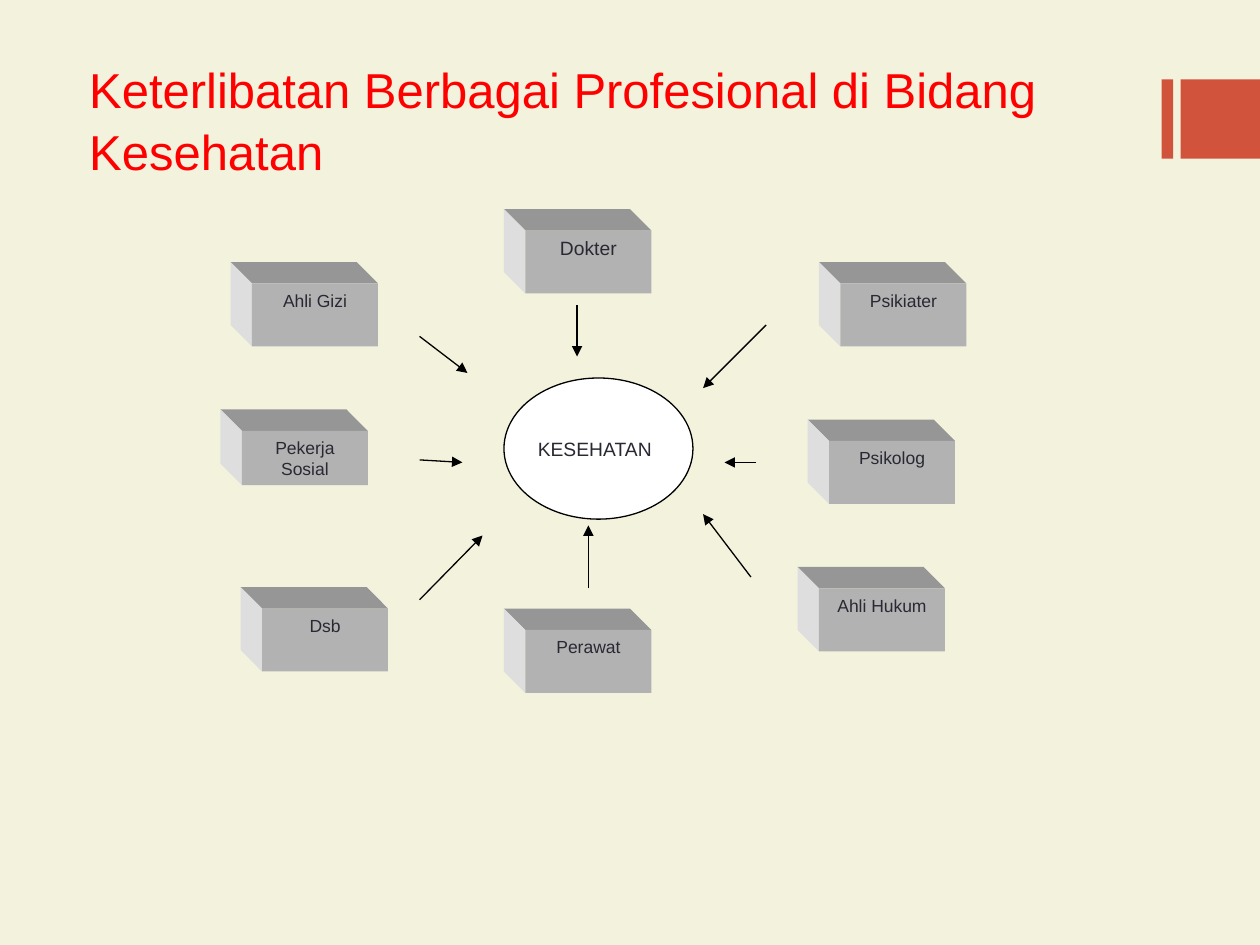
from pptx import Presentation
from pptx.dml.color import RGBColor
from pptx.enum.shapes import MSO_CONNECTOR, MSO_SHAPE
from pptx.enum.text import MSO_ANCHOR, PP_ALIGN
from pptx.oxml.ns import qn
from pptx.util import Inches, Pt
from lxml import etree

RECTANGLE, OVAL = MSO_SHAPE.RECTANGLE, MSO_SHAPE.OVAL
STRAIGHT = MSO_CONNECTOR.STRAIGHT
TOP, MIDDLE = MSO_ANCHOR.TOP, MSO_ANCHOR.MIDDLE
LEFT, CENTER = PP_ALIGN.LEFT, PP_ALIGN.CENTER

FONT = "Arial"
COLORS = {
    "background": "F3F2DC", "accent": "D2533C", "title": "FF0000",
    "text": "292934", "line": "000000", "hub": "FFFFFF",
    "front": "B2B2B2", "top": "969696", "side": "DEDEDE",
}

# Content
TITLE = "Keterlibatan Berbagai Profesional di Bidang Kesehatan"
HUB = "KESEHATAN"
BOX_WIDTH, BOX_HEIGHT, DEPTH = 1, 0.5, 0.17
# name, left, top, height, text size, arrow start, arrow end
PROFESSIONS = [
    ("Dsb", 2.08, 4.83, BOX_HEIGHT, 10, (3.33, 4.76), (3.83, 4.25)),
    ("Pekerja Sosial", 1.92, 3.42, 0.43, 10, (3.33, 3.65), (3.67, 3.67)),
    ("Ahli Gizi", 2, 2.25, BOX_HEIGHT, 10, (3.33, 2.67), (3.71, 2.96)),
    ("Dokter", 4.17, 1.83, BOX_HEIGHT, 11, (4.58, 2.42), (4.58, 2.83)),
    ("Psikiater", 6.67, 2.25, BOX_HEIGHT, 10, (6.08, 2.58), (5.58, 3.08)),
    ("Psikolog", 6.58, 3.5, BOX_HEIGHT, 10, (6, 3.67), (5.75, 3.67)),
    ("Perawat", 4.17, 5, BOX_HEIGHT, 10, (4.67, 4.67), (4.67, 4.17)),
    ("Ahli Hukum", 6.5, 4.67, BOX_HEIGHT, 10, (5.96, 4.58), (5.58, 4.08)),
]
ACCENT_BARS = [(9.22, 0.09), (9.37, 0.63)]  # left, width


def rgb(name):
    return RGBColor.from_string(COLORS[name])


def paint(shape, fill, line=None):
    shape.shadow.inherit = False
    shape.fill.solid()
    shape.fill.fore_color.rgb = rgb(fill)
    if line:
        shape.line.color.rgb = rgb(line)
        shape.line.width = Pt(0.75)
    else:
        shape.line.fill.background()
    return shape


def add_shape(kind, left, top, width, height, fill, line=None):
    area = map(Inches, (left, top, width, height))
    return paint(slide.shapes.add_shape(kind, *area), fill, line)


def add_face(points, fill):
    corners = [(Inches(x), Inches(y)) for x, y in points]
    builder = slide.shapes.build_freeform(*corners[0])
    builder.add_line_segments(corners[1:], close=True)
    paint(builder.convert_to_shape(), fill)


def write(shape, text, size, color="text", align=CENTER, anchor=TOP):
    frame = shape.text_frame
    frame.word_wrap = True
    frame.vertical_anchor = anchor
    frame.text = text
    paragraph = frame.paragraphs[0]
    paragraph.alignment = align
    font = paragraph.runs[0].font
    font.name, font.size, font.color.rgb = FONT, Pt(size), rgb(color)
    return paragraph


def add_box(name, left, top, height, size):
    right, bottom = left + BOX_WIDTH, top + height
    back_left, back_top = left - DEPTH, top - DEPTH
    add_face([(left, top), (right, top), (right - DEPTH, back_top),
              (back_left, back_top)], "top")
    add_face([(left, top), (left, bottom), (back_left, bottom - DEPTH),
              (back_left, back_top)], "side")
    front = add_shape(RECTANGLE, left, top, BOX_WIDTH, height, "front")
    write(front, name, size)


def add_arrow(start, end):
    arrow = slide.shapes.add_connector(STRAIGHT, *map(Inches, start + end))
    arrow.line.color.rgb = rgb("line")
    arrow.line.width = Pt(0.75)
    properties = arrow.line._get_or_add_ln()
    etree.SubElement(properties, qn("a:tailEnd"), type="triangle")
    etree.SubElement(arrow._element.spPr, qn("a:effectLst"))


presentation = Presentation()
presentation.slide_width, presentation.slide_height = Inches(10), Inches(7.5)
slide = presentation.slides.add_slide(presentation.slide_layouts[6])
slide.background.fill.solid()
slide.background.fill.fore_color.rgb = rgb("background")

# Accent bars at the right edge
for left, width in ACCENT_BARS:
    add_shape(RECTANGLE, left, 0.63, width, 0.63, "accent")

# Professions as solid boxes
for name, left, top, height, size, start, end in PROFESSIONS:
    add_box(name, left, top, height, size)

# Hub with arrows pointing to it
add_shape(OVAL, 4, 3, 1.5, 1.12, "hub", "line")
for *box, start, end in PROFESSIONS:
    add_arrow(start, end)
hub_label = add_shape(RECTANGLE, 4.17, 3.42, 1.2, 0.38, "hub")
write(hub_label, HUB, 11, align=LEFT)

# Title
title = slide.shapes.add_textbox(*map(Inches, (0.61, 0.42, 8.78, 1.04)))
write(title, TITLE, 28, "title", LEFT, MIDDLE).line_spacing = 1.05

presentation.save("out.pptx")
